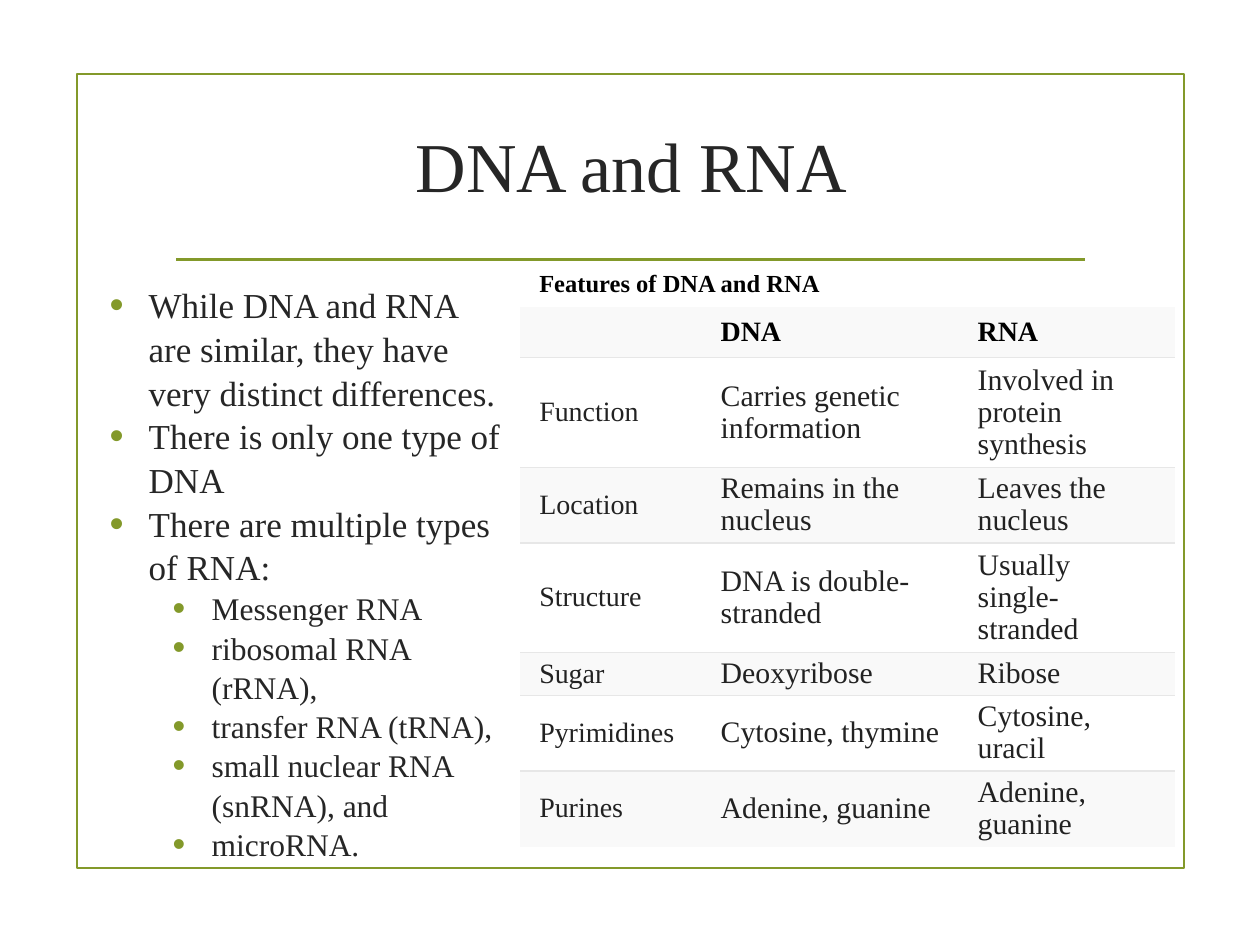
from lxml import etree
from pptx import Presentation
from pptx.dml.color import RGBColor
from pptx.enum import shapes, text
from pptx.oxml import ns
from pptx.util import Inches, Pt

FONT = "Times New Roman"
GREEN, INK, CELL_INK, BLACK = "83992A", "262626", "222222", "000000"
WHITE, BAND, RULE = "FFFFFF", "F9F9F9", "E7E7E7"
NO_STYLE = "{2D5ABB26-0587-4C30-8999-92F81FD0307C}"

BULLETS = [
    (0, "While DNA and RNA are similar, they have very distinct differences."),
    (0, "There is only one type of DNA"),
    (0, "There are multiple types of RNA:"),
    (1, "Messenger RNA"),
    (1, "ribosomal RNA (rRNA),"),
    (1, "transfer RNA (tRNA),"),
    (1, "small nuclear RNA (snRNA), and"),
    (1, "microRNA."),
]
CAPTION = "Features of DNA and RNA"
FEATURES = [
    ("", "DNA", "RNA"),
    ("Function", "Carries genetic information", "Involved in protein synthesis"),
    ("Location", "Remains in the nucleus", "Leaves the nucleus"),
    ("Structure", "DNA is double-stranded", "Usually single-stranded"),
    ("Sugar", "Deoxyribose", "Ribose"),
    ("Pyrimidines", "Cytosine, thymine", "Cytosine, uracil"),
    ("Purines", "Adenine, guanine", "Adenine, guanine"),
]
COLUMN_WIDTHS = [1.44, 2.04, 1.72]
ROW_HEIGHTS = [0.37, 0.37, 0.87, 0.6, 0.87, 0.34, 0.6, 0.6]


def color(value):
    return RGBColor.from_string(value)


def set_all(target, values):
    for name, value in values.items():
        setattr(target, name, value)


def add_element(parent, tag, **attributes):
    return etree.SubElement(parent, ns.qn(tag), attributes)


def write(para, words, size, ink, bold=False):
    span = para.add_run()
    span.text = words
    set_all(span.font, {"name": FONT, "size": Pt(size), "bold": bold})
    span.font.color.rgb = color(ink)


def place(shape, box):
    names = ("left", "top", "width", "height")
    set_all(shape, dict(zip(names, map(Inches, box))))


def add_frame(page, box):
    """Outline of the page with the rule under the title."""
    left, top, width, height = box
    frame = page.shapes.add_shape(
        shapes.MSO_SHAPE.RECTANGLE, *map(Inches, box))
    frame.shadow.inherit = False
    frame.fill.background()
    rule_y = Inches(top + 1.47)
    rule = page.shapes.add_connector(
        shapes.MSO_CONNECTOR.STRAIGHT,
        Inches(left + 0.79), rule_y, Inches(left + width - 0.79), rule_y)
    add_element(rule._element.spPr, "a:effectLst")
    for shape in (frame, rule):
        shape.line.color.rgb = color(GREEN)
        shape.line.width = Pt(1.25)


def fill_title(title, box):
    place(title, box)
    title.text_frame.vertical_anchor = text.MSO_ANCHOR.MIDDLE
    para = title.text_frame.paragraphs[0]
    para.alignment = text.PP_ALIGN.CENTER
    write(para, "DNA and RNA", 40, INK)


def add_bullet(para, level):
    props = para._p.get_or_add_pPr()
    props.set("marL", str(Inches(0.31 + 0.5 * level)))
    props.set("indent", str(Inches(-0.31)))
    add_element(add_element(props, "a:buClr"), "a:srgbClr", val=GREEN)
    add_element(props, "a:buSzPct", val="115000")
    add_element(props, "a:buFont", typeface="Arial")
    add_element(props, "a:buChar", char="•")


def fill_list(body, box):
    place(body, box)
    frame = body.text_frame
    set_all(frame, {"word_wrap": True, "auto_size": text.MSO_AUTO_SIZE.NONE,
                    "vertical_anchor": text.MSO_ANCHOR.TOP})
    for index, (level, words) in enumerate(BULLETS):
        para = frame.add_paragraph() if index else frame.paragraphs[0]
        add_bullet(para, level)
        set_all(para, {"level": level, "line_spacing": 1.04,
                       "space_before": Pt(0), "space_after": Pt(0),
                       "alignment": text.PP_ALIGN.LEFT})
        write(para, words, 20 - 2 * level, INK)


def add_border(cell, tag):
    line = add_element(cell._tc.get_or_add_tcPr(), tag, w=str(Pt(0.75)))
    add_element(add_element(line, "a:solidFill"), "a:srgbClr", val=RULE)


def fill_cell(cell, words, size, ink, bold, margin):
    set_all(cell, {"margin_left": Inches(0.15), "margin_right": Inches(0.15),
                   "margin_top": Inches(margin), "margin_bottom": Inches(margin),
                   "vertical_anchor": text.MSO_ANCHOR.MIDDLE})
    para = cell.text_frame.paragraphs[0]
    para.line_spacing = 0.97
    write(para, words, size, ink, bold)


def add_features(page, left, top):
    rows = [(CAPTION, "", "")] + FEATURES
    table = page.shapes.add_table(
        len(rows), len(COLUMN_WIDTHS), Inches(left), Inches(top),
        Inches(sum(COLUMN_WIDTHS)), Inches(sum(ROW_HEIGHTS))).table
    set_all(table, {"first_row": False, "horz_banding": False})
    table._tbl.tblPr.find(ns.qn("a:tableStyleId")).text = NO_STYLE
    for column, width in zip(table.columns, COLUMN_WIDTHS):
        column.width = Inches(width)
    for row, height in zip(table.rows, ROW_HEIGHTS):
        row.height = Inches(height)
    table.cell(0, 0).merge(table.cell(0, 2))

    for r, row in enumerate(rows):
        heading = r < 2
        for c, words in enumerate(row):
            cell = table.cell(r, c)
            size = 14 if r == 0 else 16 if heading or c == 0 else 17
            fill_cell(cell, words, size, BLACK if heading else CELL_INK,
                      heading, 0.06 if heading else 0.04)
            if r > 1:
                add_border(cell, "a:lnT")
            if 0 < r < len(rows) - 1:
                add_border(cell, "a:lnB")
            cell.fill.solid()
            cell.fill.fore_color.rgb = color(BAND if r % 2 else WHITE)


def main():
    deck = Presentation()
    set_all(deck, {"slide_width": Inches(10), "slide_height": Inches(7.5)})
    page = deck.slides.add_slide(deck.slide_layouts[1])
    add_frame(page, (0.61, 0.59, 8.79, 6.3))
    fill_title(page.shapes.title, (1.29, 0.67, 7.44, 1.27))
    fill_list(page.placeholders[1], (0.77, 2.19, 3.36, 4.68))
    add_features(page, 4.13, 2.07)
    deck.save("out.pptx")


if __name__ == "__main__":
    main()
